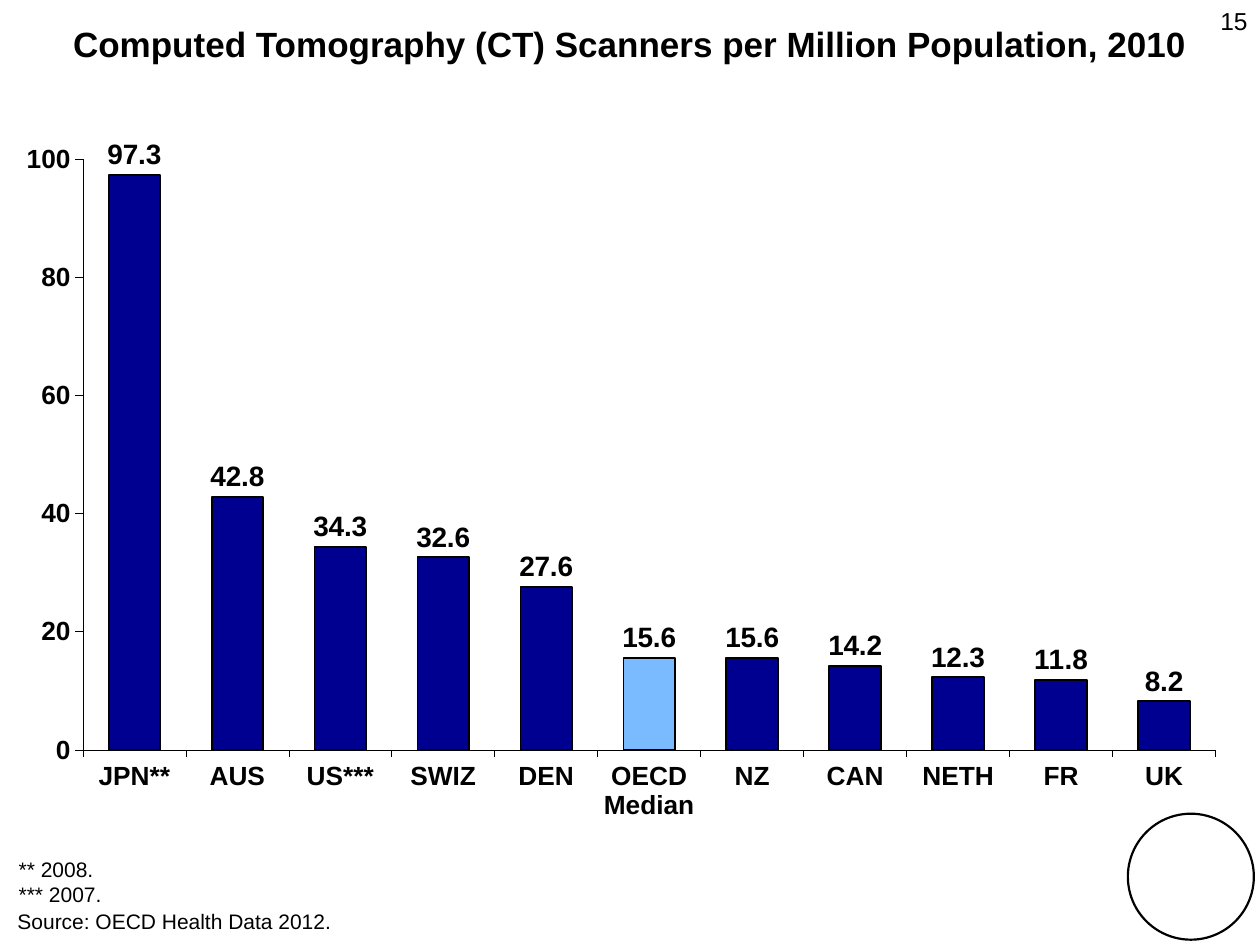
import lxml.etree
import pptx
import pptx.chart.data
import pptx.dml.color
import pptx.enum.chart
import pptx.enum.shapes
import pptx.enum.text
import pptx.oxml.ns
import pptx.util

Pt = pptx.util.Pt
ALIGN = pptx.enum.text.PP_ALIGN
ANCHOR = pptx.enum.text.MSO_ANCHOR
COLORS = {"ink": "000000", "bar": "000090", "median": "7ABAFF"}
FONT = "Arial"
RATES = {
    "JPN**": 97.3, "AUS": 42.8, "US***": 34.3, "SWIZ": 32.6, "DEN": 27.6,
    "OECD Median": 15.6, "NZ": 15.6, "CAN": 14.2, "NETH": 12.3,
    "FR": 11.8, "UK": 8.2,
}
PLOT = {"x": 0.051, "y": 0.034, "w": 0.938, "h": 0.832}


def color(name):
    return pptx.dml.color.RGBColor.from_string(COLORS[name])


def style(font, size, bold=False):
    font.name = FONT
    font.size = Pt(size)
    font.bold = bold
    font.color.rgb = color("ink")


def paint(fill, name):
    fill.solid()
    fill.fore_color.rgb = color(name)


def stroke(line, width):
    paint(line.fill, "ink")
    line.width = Pt(width)


def add_text(slide, box, lines, size, bold=False, align=ALIGN.LEFT,
             anchor=ANCHOR.TOP, wrap=True):
    frame = slide.shapes.add_textbox(*map(Pt, box)).text_frame
    frame.word_wrap = wrap
    frame.vertical_anchor = anchor
    for i, line in enumerate(lines):
        para = frame.add_paragraph() if i else frame.paragraphs[0]
        para.alignment = align
        run = para.add_run()
        run.text = line
        style(run.font, size, bold)


def set_plot(chart):
    """Fix the inner plot area as fractions of the chart frame."""
    qn = pptx.oxml.ns.qn
    area = chart.element.find(".//" + qn("c:plotArea"))
    for old in area.findall(qn("c:layout")):
        area.remove(old)
    layout = lxml.etree.Element(qn("c:layout"))
    area.insert(0, layout)
    manual = lxml.etree.SubElement(layout, qn("c:manualLayout"))
    rules = {"layoutTarget": "inner", "xMode": "edge", "yMode": "edge", **PLOT}
    for tag, val in rules.items():
        lxml.etree.SubElement(manual, qn("c:" + tag), val=str(val))


def set_axis(axis):
    axis.has_major_gridlines = False
    axis.major_tick_mark = pptx.enum.chart.XL_TICK_MARK.OUTSIDE
    axis.minor_tick_mark = pptx.enum.chart.XL_TICK_MARK.NONE
    style(axis.tick_labels.font, 15, True)
    stroke(axis.format.line, 0.27)


def add_labels(plot):
    plot.has_data_labels = True
    labels = plot.data_labels
    labels.show_value = True
    labels.position = pptx.enum.chart.XL_LABEL_POSITION.OUTSIDE_END
    labels.number_format = "#,##0.0"
    labels.number_format_is_linked = False
    style(labels.font, 16, True)


def add_bars(slide, box):
    data = pptx.chart.data.CategoryChartData()
    data.categories = list(RATES)
    data.add_series("Series 1", list(RATES.values()))
    kind = pptx.enum.chart.XL_CHART_TYPE.COLUMN_CLUSTERED
    chart = slide.shapes.add_chart(kind, *map(Pt, box), data).chart
    chart.has_legend = False
    chart.has_title = False
    style(chart.font, 14)
    set_plot(chart)

    set_axis(chart.category_axis)
    axis = chart.value_axis
    set_axis(axis)
    axis.minimum_scale, axis.maximum_scale = 0, 100
    axis.major_unit = 20
    axis.tick_labels.number_format = "#,##0"
    axis.tick_labels.number_format_is_linked = False

    plot = chart.plots[0]
    plot.gap_width = 100
    plot.vary_by_categories = False
    add_labels(plot)
    bars = plot.series[0]
    bars.invert_if_negative = False
    median = bars.points[list(RATES).index("OECD Median")]
    for part, name in ((bars, "bar"), (median, "median")):
        paint(part.format.fill, name)
        stroke(part.format.line, 1.08)


def add_ring(slide, box):
    oval = pptx.enum.shapes.MSO_SHAPE.OVAL
    ring = slide.shapes.add_shape(oval, *map(Pt, box))
    ring.shadow.inherit = False
    ring.fill.background()
    stroke(ring.line, 1.25)


def main():
    deck = pptx.Presentation()
    deck.slide_width, deck.slide_height = Pt(720), Pt(540)
    slide = deck.slides.add_slide(deck.slide_layouts[6])

    add_text(slide, (552, 0, 168, 37.5), ["15"], 14, align=ALIGN.RIGHT)
    add_text(slide, (0, 7, 720, 36),
             ["Computed Tomography (CT) Scanners per Million Population, 2010"],
             20, True, ALIGN.CENTER, ANCHOR.MIDDLE)
    add_bars(slide, (12.2, 77, 690, 406))
    add_ring(slide, (644.5, 465, 72, 72))
    add_text(slide, (3.6, 486, 62, 36), ["** 2008.", "*** 2007."], 12,
             wrap=False)
    add_text(slide, (2.9, 515.5, 292, 21.6),
             ["Source: OECD Health Data 2012."], 12)
    deck.save("out.pptx")


if __name__ == "__main__":
    main()
